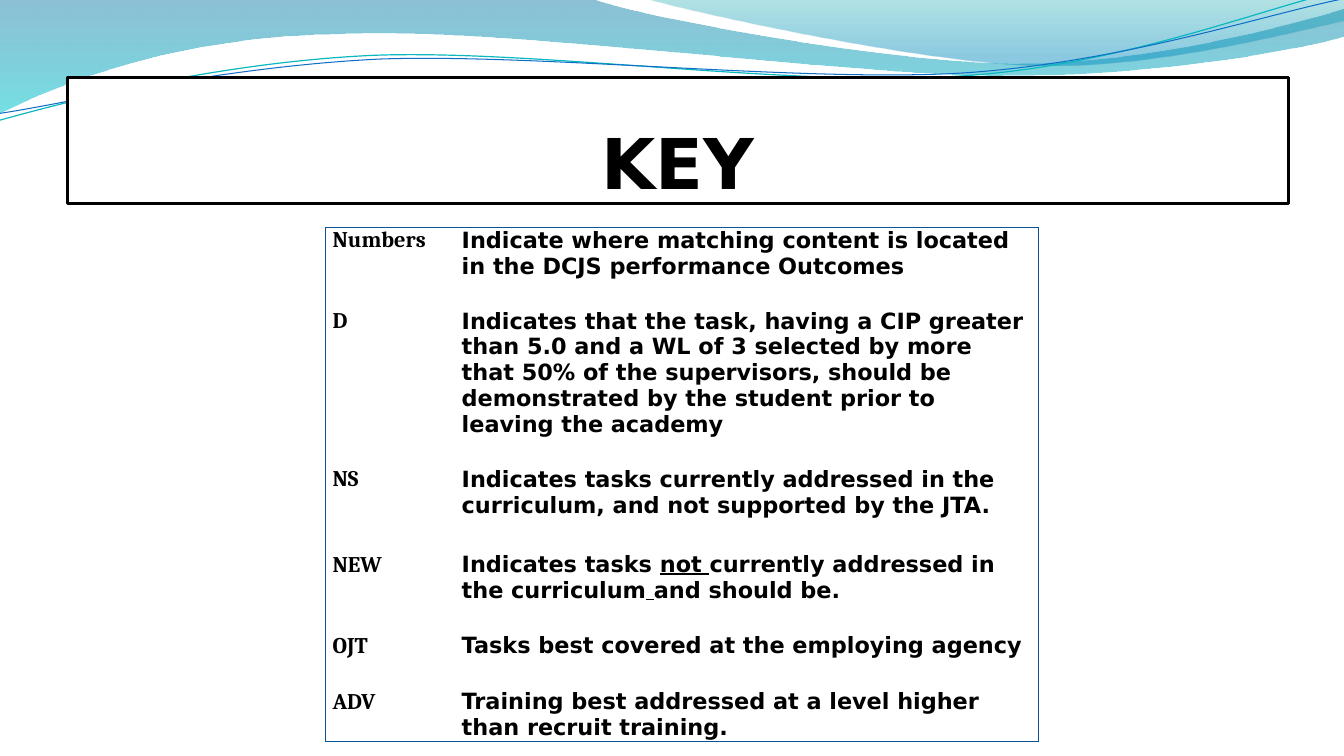
from lxml import etree
from pptx import Presentation
from pptx import util as u
from pptx.dml.color import RGBColor
from pptx.enum import shapes, text
from pptx.oxml import ns

BLACK = RGBColor(0x00, 0x00, 0x00)
WHITE = RGBColor(0xFF, 0xFF, 0xFF)
BORDER_BLUE = RGBColor(0x09, 0x52, 0x95)
LINE_TEAL = RGBColor(0x0A, 0xB8, 0xBF)
LINE_BLUE = RGBColor(0x0F, 0x6F, 0xC6)
# Gradient stops: position, colour, opacity (percent)
BAND_STOPS = [(0, RGBColor(0x00, 0x74, 0xA1), 45), (100, RGBColor(0x00, 0xC6, 0xCF), 55)]
CREST_STOPS = [(0, RGBColor(0x00, 0xA1, 0xA9), 30), (80, RGBColor(0x00, 0x8B, 0xBF), 45)]

SANS, SERIF = "DejaVu Sans", "Cambria"

# Outlines: a start point, then lines (x, y) and Bezier curves (three points)
BAND = [(0, 0), (5.87, -0.01), (6.34, 0.17, 8.85, 0.63, 10.11, 0.63),
        (11.38, 0.63, 12.78, 0.26, 13.33, 0.09), (13.35, 0.36),
        (13.11, 0.44, 11.6, 0.76, 9.94, 0.75), (8.29, 0.75, 5.09, 0.28, 3.43, 0.34),
        (1.72, 0.36, 0.61, 0.83, -0.01, 1.13), (0, 0)]
CREST = [(6.39, -0.01), (6.79, 0.11, 9.09, 0.62, 10.25, 0.65),
         (11.41, 0.69, 12.82, 0.32, 13.33, 0.21), (13.33, 0), (6.39, -0.01)]
# The two wave lines lie level here and are tilted when drawn
TEAL_WAVE = [(-0.03, 0.88), (0.63, 0.73, 2.11, 0.41, 3.69, 0.41),
             (5.28, 0.42, 7.88, 0.93, 9.49, 0.89), (11.09, 0.87, 12.54, 0.36, 13.33, 0.22)]
BLUE_WAVE = [(-0.02, 0.81), (0.62, 0.75, 2.18, 0.45, 3.78, 0.45),
             (5.37, 0.47, 7.95, 0.88, 9.54, 0.86), (11.14, 0.83, 12.56, 0.42, 13.36, 0.3)]
WAVE_TILT = 357.3

# Key entries: code, row height, runs of (wording, underlined)
ENTRIES = [
    ("Numbers", 0.52, [("Indicate where matching content is located in the DCJS "
                        "performance Outcomes", False)]),
    ("D", 1.29, [("Indicates that the task, having a CIP greater than 5.0 and a WL of 3 "
                  "selected by more that 50% of the supervisors, should be demonstrated "
                  "by the student prior to leaving the academy", False)]),
    ("NS", 0.57, [("Indicates tasks currently addressed in the curriculum, and not "
                   "supported by the JTA.", False)]),
    ("NEW", 0.52, [("Indicates tasks ", False), ("not ", True),
                   ("currently addressed in the curriculum", False), (" ", True),
                   ("and should be.", False)]),
    ("OJT", 0.28, [("Tasks best covered at the employing agency", False)]),
    ("ADV", 0.52, [("Training best addressed at a level higher than recruit training.", False)]),
]
SPACER_HEIGHT = 0.28
COLUMN_WIDTHS = (1.28, 5.79)


def add_outline(page, outline, close):
    """Draw an outline, turning each run of three curve points into one Bezier."""
    points = [(u.Inches(x), u.Inches(y)) for segment in outline
              for x, y in zip(segment[::2], segment[1::2])]
    builder = page.shapes.build_freeform(*points[0])
    builder.add_line_segments(points[1:], close=close)
    shape = builder.convert_to_shape()
    shape.shadow.inherit = False
    steps = iter(list(shape.element.spPr.iter(ns.qn("a:lnTo"))))
    for segment in outline[1:]:
        step = next(steps)
        if len(segment) == 6:
            step.tag = ns.qn("a:cubicBezTo")
            for _ in range(2):
                extra = next(steps)
                step.append(extra[0])
                extra.getparent().remove(extra)
    return shape


def add_wave_fill(page, outline, stops):
    shape = add_outline(page, outline, True)
    shape.line.fill.background()
    gradient = etree.Element(ns.qn("a:gradFill"), rotWithShape="1")
    stop_list = etree.SubElement(gradient, ns.qn("a:gsLst"))
    for position, color, opacity in stops:
        stop = etree.SubElement(stop_list, ns.qn("a:gs"), pos=str(position * 1000))
        paint = etree.SubElement(stop, ns.qn("a:srgbClr"), val=str(color))
        etree.SubElement(paint, ns.qn("a:alpha"), val=str(opacity * 1000))
    etree.SubElement(gradient, ns.qn("a:lin"), ang="5400000", scaled="0")
    shape.element.spPr.find(ns.qn("a:custGeom")).addnext(gradient)


def add_wave_line(page, outline, color, width):
    shape = add_outline(page, outline, False)
    shape.rotation = WAVE_TILT
    shape.fill.background()
    shape.line.color.rgb = color
    shape.line.width = u.Pt(width)


def add_span(para, wording, font, size, underline=False):
    span = para.add_run()
    span.text = wording
    span.font.name, span.font.size = font, u.Pt(size)
    span.font.bold = True
    span.font.color.rgb = BLACK
    if underline:
        span.font.underline = True


def add_title(page, wording):
    box = page.shapes.add_shape(shapes.MSO_SHAPE.RECTANGLE, u.Inches(0.67), u.Inches(0.77),
                                u.Inches(12.11), u.Inches(1.25))
    box.shadow.inherit = False
    box.fill.solid()
    box.fill.fore_color.rgb = WHITE
    box.line.color.rgb = BLACK
    box.line.width = u.Pt(2)
    frame = box.text_frame
    frame.word_wrap = True
    frame.vertical_anchor = text.MSO_ANCHOR.BOTTOM
    frame.margin_left = frame.margin_right = frame.margin_bottom = 0
    frame.margin_top = u.Inches(0.05)
    para = frame.paragraphs[0]
    para.alignment = text.PP_ALIGN.CENTER
    add_span(para, wording, SANS, 50)


def set_borders(cell, drawn_sides):
    for side in "LRTB":
        line = etree.SubElement(cell._tc.get_or_add_tcPr(), ns.qn("a:ln" + side),
                                w=str(u.Pt(0.75)))
        if side in drawn_sides:
            fill = etree.SubElement(line, ns.qn("a:solidFill"))
            etree.SubElement(fill, ns.qn("a:srgbClr"), val=str(BORDER_BLUE))
        else:
            etree.SubElement(line, ns.qn("a:noFill"))


def add_key_table(page, entries):
    row_count = 2 * len(entries) - 1
    heights = [SPACER_HEIGHT] * row_count
    heights[::2] = [height for _, height, _ in entries]
    table = page.shapes.add_table(row_count, 2, u.Inches(3.23), u.Inches(2.26),
                                  u.Inches(sum(COLUMN_WIDTHS)),
                                  u.Inches(sum(heights))).table
    table.first_row = table.horz_banding = False
    for column, width in zip(table.columns, COLUMN_WIDTHS):
        column.width = u.Inches(width)
    # Only the outer frame is drawn
    for index, height in enumerate(heights):
        table.rows[index].height = u.Inches(height)
        ends = ("T" if index == 0 else "") + ("B" if index == row_count - 1 else "")
        for cell, side in zip(table.rows[index].cells, "LR"):
            set_borders(cell, side + ends)
            cell.fill.background()
            cell.margin_left = cell.margin_right = u.Inches(0.07)
            cell.margin_top = cell.margin_bottom = 0
            if index % 2:  # small type keeps empty spacer rows low
                para = cell.text_frame.paragraphs[0]
                etree.SubElement(para._p, ns.qn("a:endParaRPr"), sz="1200")
    # Every other row holds an entry
    for index, (code, _, spans) in enumerate(entries):
        code_cell, meaning_cell = table.rows[2 * index].cells
        add_span(code_cell.text_frame.paragraphs[0], code, SERIF, 16)
        for wording, underline in spans:
            add_span(meaning_cell.text_frame.paragraphs[0], wording, SANS, 16, underline)


def main():
    deck = Presentation()
    deck.slide_width, deck.slide_height = u.Inches(13.33), u.Inches(7.5)
    page = deck.slides.add_slide(deck.slide_layouts[6])

    # Wave decoration
    add_wave_fill(page, BAND, BAND_STOPS)
    add_wave_fill(page, CREST, CREST_STOPS)
    add_wave_line(page, TEAL_WAVE, LINE_TEAL, 0.85)
    add_wave_line(page, BLUE_WAVE, LINE_BLUE, 0.75)

    # Content
    add_title(page, "KEY")
    add_key_table(page, ENTRIES)
    deck.save("out.pptx")


if __name__ == "__main__":
    main()
